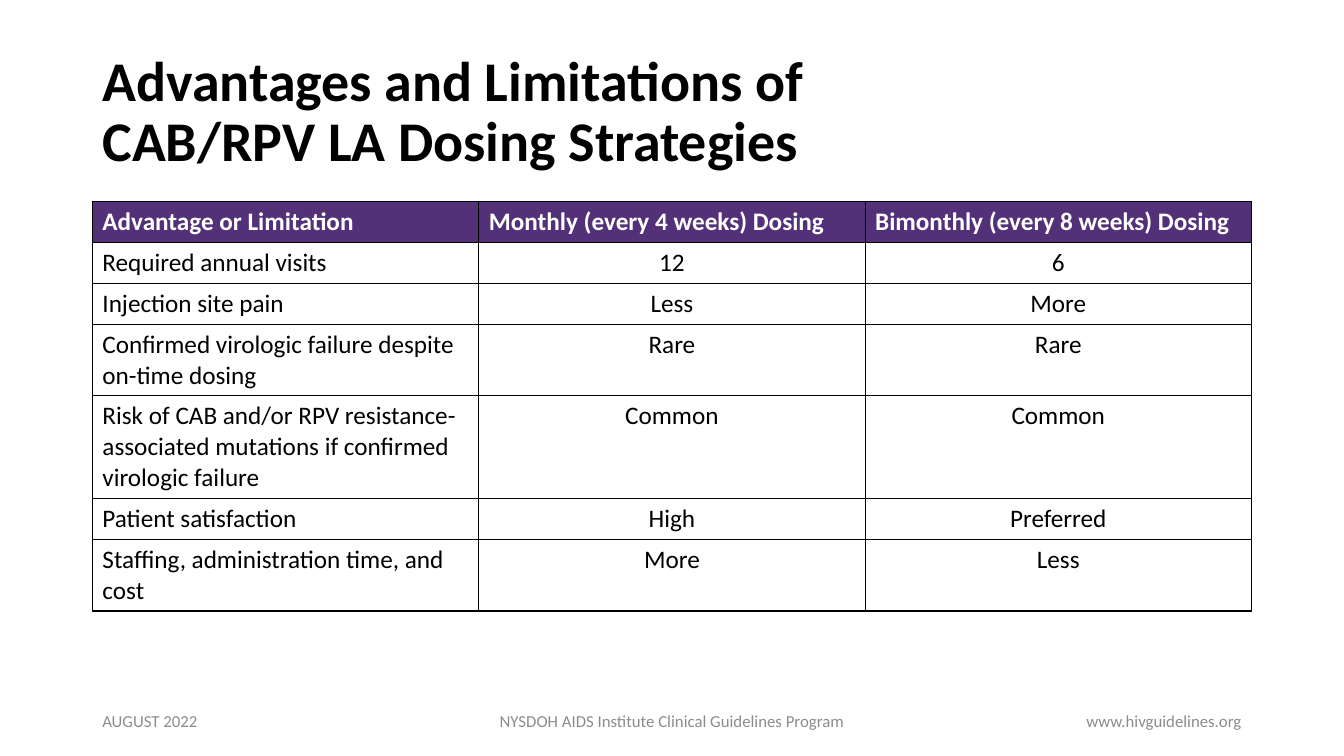
from pptx import Presentation
from pptx.dml.color import RGBColor
from pptx.enum import text
from pptx.oxml import parse_xml
from pptx.oxml.ns import nsdecls
from pptx.util import Pt

FONT = "Calibri"
BLACK, WHITE, PURPLE, GRAY = "000000", "FFFFFF", "523178", "8C8C8C"
LEFT, CENTER, RIGHT = text.PP_ALIGN.LEFT, text.PP_ALIGN.CENTER, text.PP_ALIGN.RIGHT
TITLE = ["Advantages and Limitations of ", "CAB/RPV LA Dosing Strategies"]
ROWS = [
    ("Advantage or Limitation", "Monthly (every 4 weeks) Dosing", "Bimonthly (every 8 weeks) Dosing"),
    ("Required annual visits", "12", "6"),
    ("Injection site pain", "Less", "More"),
    ("Confirmed virologic failure despite on-time dosing", "Rare", "Rare"),
    ("Risk of CAB and/or RPV resistance-associated mutations if confirmed virologic failure",
     "Common", "Common"),
    ("Patient satisfaction", "High", "Preferred"),
    ("Staffing, administration time, and cost", "More", "Less"),
]
LINES = [1, 1, 1, 2, 3, 1, 2]
FOOTERS = [
    ("AUGUST 2022", 66, 216, LEFT),
    ("NYSDOH AIDS Institute Clinical Guidelines Program", 318, 324, CENTER),
    ("www.hivguidelines.org", 678, 216, RIGHT),
]
MARGIN, WIDTH = 66, 828
TABLE_TOP, LINE_HEIGHT, CELL_PADDING = 144, 22, 7.2


def color(value):
    return RGBColor.from_string(value)


def add_span(para, words, size, fill, bold=False):
    span = para.add_run()
    span.text = words
    span.font.name = FONT
    span.font.size = Pt(size)
    span.font.bold = bold
    span.font.color.rgb = color(fill)


def add_borders(cell):
    properties = cell._tc.get_or_add_tcPr()
    for index, side in enumerate(("lnL", "lnR", "lnT", "lnB")):
        properties.insert(index, parse_xml(
            f'<a:{side} {nsdecls("a")} w="{Pt(1)}"><a:solidFill>'
            f'<a:srgbClr val="{BLACK}"/></a:solidFill></a:{side}>'))


def add_title(page):
    title = page.shapes.title
    title.left, title.top, title.width, title.height = Pt(MARGIN), Pt(28.75), Pt(WIDTH), Pt(104.4)
    frame = title.text_frame
    frame.word_wrap = True
    frame.auto_size = text.MSO_AUTO_SIZE.NONE
    frame.vertical_anchor = text.MSO_ANCHOR.MIDDLE
    para = frame.paragraphs[0]
    para.alignment = LEFT
    para.line_spacing = 0.9
    add_span(para, TITLE[0], 40, BLACK, True)
    para.add_line_break()
    add_span(para, TITLE[1], 40, BLACK, True)


def add_dosing_table(page):
    heights = [count * LINE_HEIGHT + CELL_PADDING for count in LINES]
    columns = len(ROWS[0])
    table = page.shapes.add_table(len(ROWS), columns, Pt(MARGIN), Pt(TABLE_TOP),
                                  Pt(WIDTH), Pt(sum(heights))).table
    table.horz_banding = False
    for column in table.columns:
        column.width = Pt(WIDTH / columns)
    for row, values in enumerate(ROWS):
        table.rows[row].height = Pt(heights[row])
        header = row == 0
        for column, words in enumerate(values):
            cell = table.cell(row, column)
            cell.fill.solid()
            cell.fill.fore_color.rgb = color(PURPLE if header else WHITE)
            add_borders(cell)
            para = cell.text_frame.paragraphs[0]
            para.alignment = LEFT if header or column == 0 else CENTER
            add_span(para, words, 18, WHITE if header else BLACK, header)


def add_footers(page):
    for words, left, width, alignment in FOOTERS:
        box = page.shapes.add_textbox(Pt(left), Pt(500.5), Pt(width), Pt(28.75))
        frame = box.text_frame
        frame.word_wrap = True
        frame.vertical_anchor = text.MSO_ANCHOR.MIDDLE
        para = frame.paragraphs[0]
        para.alignment = alignment
        add_span(para, words, 12, GRAY)


def main():
    deck = Presentation()
    deck.slide_width, deck.slide_height = Pt(960), Pt(540)
    page = deck.slides.add_slide(deck.slide_layouts[5])
    add_title(page)
    add_dosing_table(page)
    add_footers(page)
    deck.save("out.pptx")


if __name__ == "__main__":
    main()
